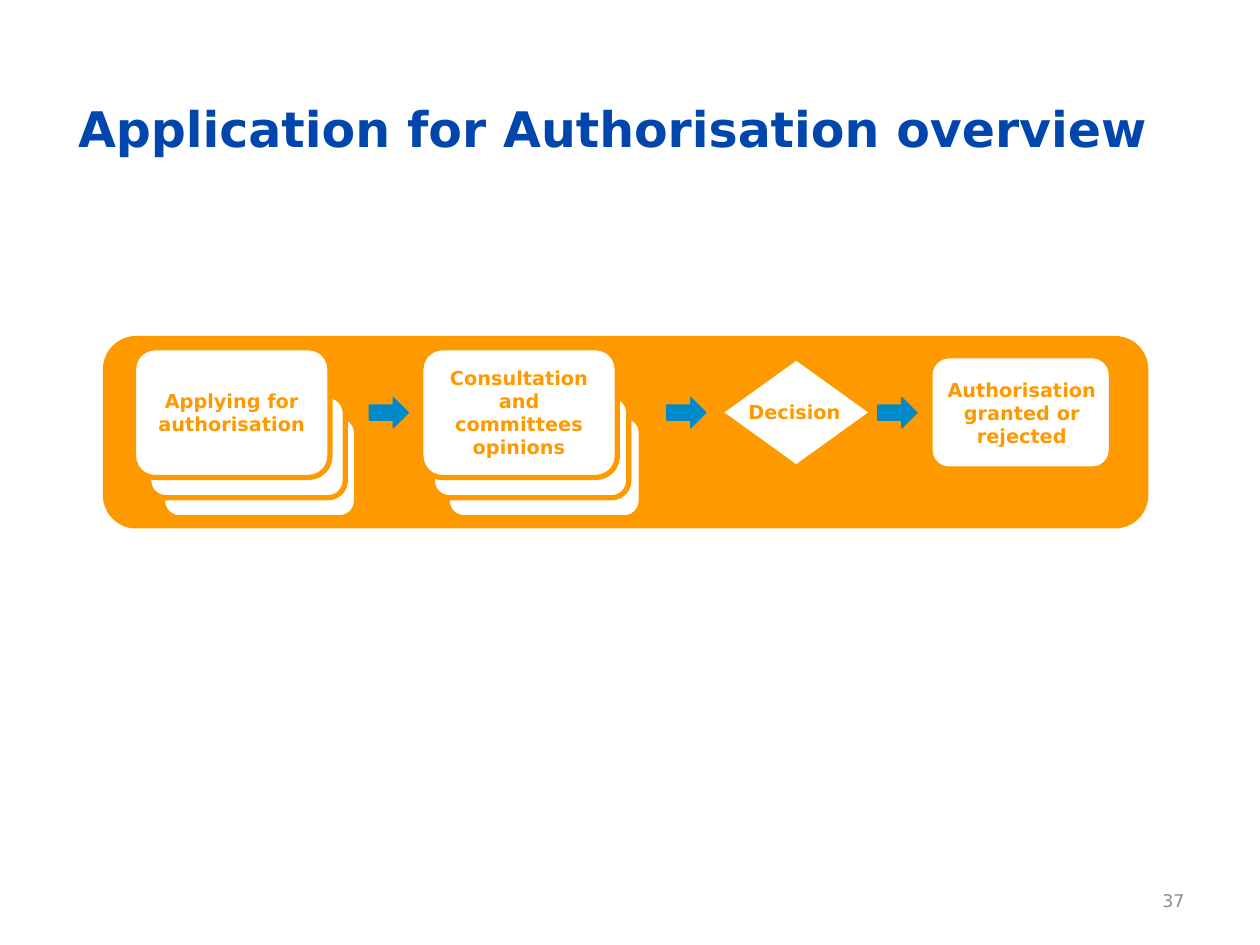
from pptx import Presentation
from pptx.dml.color import RGBColor
from pptx.enum.shapes import MSO_SHAPE
from pptx.enum.text import MSO_ANCHOR, PP_ALIGN
from pptx.util import Pt

ROUNDED = MSO_SHAPE.ROUNDED_RECTANGLE
PROCESS = MSO_SHAPE.FLOWCHART_ALTERNATE_PROCESS
DIAMOND, ARROW = MSO_SHAPE.DIAMOND, MSO_SHAPE.RIGHT_ARROW
LEFT, CENTER, RIGHT = PP_ALIGN.LEFT, PP_ALIGN.CENTER, PP_ALIGN.RIGHT
TOP, MIDDLE = MSO_ANCHOR.TOP, MSO_ANCHOR.MIDDLE

THEME = {
    "font": "DejaVu Sans",
    "title": RGBColor(0x00, 0x46, 0xAD),
    "orange": RGBColor(0xFF, 0x99, 0x00),
    "blue": RGBColor(0x00, 0x8B, 0xC8),
    "white": RGBColor(0xFF, 0xFF, 0xFF),
    "gray": RGBColor(0x8C, 0x8C, 0x8C),
    "title_size": 28, "label_size": 11, "number_size": 10,
}

# Content; boxes are (left, top, width, height) in points
TITLE = "Application for Authorisation overview"
PAGE_NUMBER = "37"
STACKED_STEPS = [  # label, left edges of back, middle and front sheets
    ("Applying for authorisation", (92.9, 85, 76.3)),
    ("Consultation and committees opinions", (255.6, 247, 240.5)),
]
DECISION = "Decision"
OUTCOME = ["Authorisation", "granted or rejected"]

# Layout
BANNER = (59.8, 193, 595.4, 108)
SHEETS = [  # preset, top, width, height, from back to front
    (ROUNDED, 237.6, 110.9, 58.3),
    (PROCESS, 226.1, 112.3, 58.3),
    (ROUNDED, 198.7, 112.3, 74.2),
]
ARROW_LEFTS = (211, 381, 501.6)
ARROW_TOP, ARROW_WIDTH, ARROW_HEIGHT = 227.2, 22.4, 17.3

prs = Presentation()
prs.slide_width, prs.slide_height = Pt(720), Pt(540)
slide = prs.slides.add_slide(prs.slide_layouts[5])


def write(shape, text, size=THEME["label_size"], color=THEME["orange"],
          bold=True, align=CENTER, anchor=MIDDLE):
    """Put one or more paragraphs into a shape."""
    frame = shape.text_frame
    frame.word_wrap = True
    frame.vertical_anchor = anchor
    lines = [text] if isinstance(text, str) else text
    for index, line in enumerate(lines):
        paragraph = frame.add_paragraph() if index else frame.paragraphs[0]
        paragraph.alignment = align
        run = paragraph.add_run()
        run.text = line
        font = run.font
        font.name, font.size, font.bold = THEME["font"], Pt(size), bold
        font.color.rgb = color


def add_box(preset, box, fill=THEME["white"], line=THEME["orange"], weight=3):
    shape = slide.shapes.add_shape(preset, *map(Pt, box))
    shape.shadow.inherit = False
    shape.fill.solid()
    shape.fill.fore_color.rgb = fill
    if weight:
        shape.line.color.rgb = line
        shape.line.width = Pt(weight)
    else:
        shape.line.fill.background()
    return shape


def add_label(box, text, **style):
    write(slide.shapes.add_textbox(*map(Pt, box)), text, **style)


# Title and page number
title = slide.shapes.title
title.left, title.top, title.width, title.height = map(Pt, (37.4, 29.5, 645.8, 87.1))
write(title, TITLE, size=THEME["title_size"], color=THEME["title"], align=LEFT)
add_label((516.2, 500.4, 167.8, 28.8), PAGE_NUMBER, size=THEME["number_size"],
          color=THEME["gray"], bold=False, align=RIGHT)

# Banner and arrows between the steps
add_box(PROCESS, BANNER, fill=THEME["orange"], weight=2)
for left in ARROW_LEFTS:
    add_box(ARROW, (left, ARROW_TOP, ARROW_WIDTH, ARROW_HEIGHT),
            fill=THEME["blue"], line=THEME["blue"], weight=0.75)

# Steps drawn as stacks of sheets, labelled on the front sheet
for label, lefts in STACKED_STEPS:
    for left, (preset, top, width, height) in zip(lefts, SHEETS):
        sheet = add_box(preset, (left, top, width, height))
    write(sheet, label)

# Decision and outcome
add_box(DIAMOND, (414, 206.2, 82, 59), weight=0)
add_label((409.7, 225.4, 88.6, 20.9), DECISION, anchor=TOP)
add_box(PROCESS, (531.4, 203.3, 103.7, 64.8))
add_label((532.8, 212.4, 102.2, 47.5), OUTCOME, anchor=TOP)

prs.save("out.pptx")
